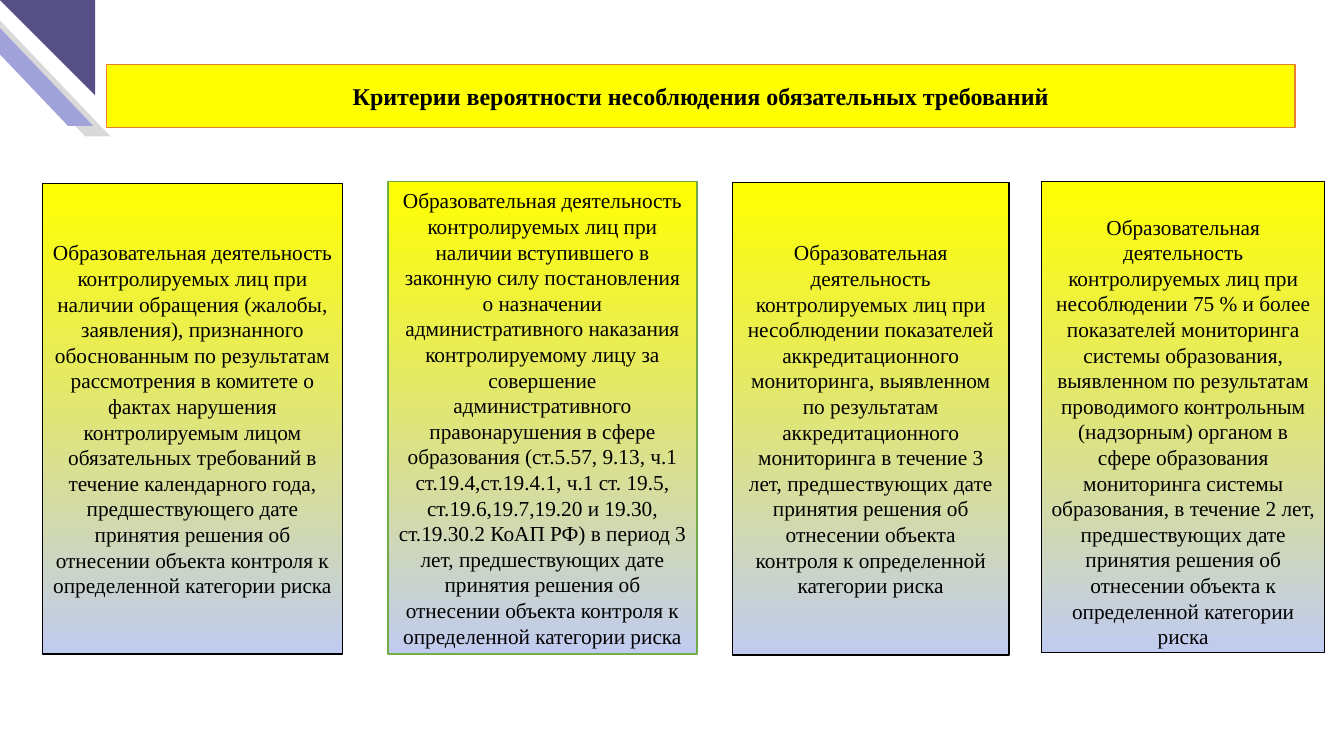
from dataclasses import dataclass

from pptx import Presentation
from pptx.dml.color import RGBColor
from pptx.enum import shapes, text
from pptx.util import Inches, Pt

FONT = "Times New Roman"
BLACK = RGBColor(0x00, 0x00, 0x00)
YELLOW = RGBColor(0xFF, 0xFF, 0x00)
PALE_BLUE = RGBColor(0xC0, 0xCB, 0xF0)
GREEN = RGBColor(0x70, 0xAD, 0x47)
ORANGE = RGBColor(0xED, 0x7D, 0x31)
GREY = RGBColor(0xD9, 0xD9, 0xD9)
LILAC = RGBColor(0xA2, 0xA2, 0xDA)
VIOLET = RGBColor(0x56, 0x50, 0x87)


@dataclass
class Box:
    left: float
    top: float
    width: float
    height: float


@dataclass
class Criterion:
    box: Box
    wording: str
    line: RGBColor = BLACK
    top_inset: float = 0.05


START = "Образовательная деятельность контролируемых лиц при "
END = " к определенной категории риска"
DECISION = "предшествующих дате принятия решения об отнесении объекта"

CRITERIA = [
    Criterion(
        Box(0.44, 1.91, 3.13, 4.9),
        "наличии обращения (жалобы, заявления), признанного обоснованным "
        "по результатам рассмотрения в комитете о фактах нарушения "
        "контролируемым лицом обязательных требований в течение календарного "
        "года, предшествующего дате принятия решения об отнесении объекта контроля",
    ),
    Criterion(
        Box(4.04, 1.89, 3.22, 4.92),
        "наличии вступившего в законную силу постановления о назначении "
        "административного наказания контролируемому лицу за совершение "
        "административного правонарушения в сфере образования (ст.5.57, 9.13, "
        "ч.1 ст.19.4,ст.19.4.1, ч.1 ст. 19.5, ст.19.6,19.7,19.20 и 19.30, "
        f"ст.19.30.2 КоАП РФ) в период 3 лет, {DECISION} контроля",
        line=GREEN,
    ),
    Criterion(
        Box(7.63, 1.9, 2.88, 4.92),
        "несоблюдении показателей аккредитационного мониторинга, выявленном "
        "по результатам аккредитационного мониторинга в течение 3 лет, "
        f"{DECISION} контроля",
    ),
    Criterion(
        Box(10.85, 1.89, 2.95, 4.9),
        "несоблюдении 75 % и более показателей мониторинга системы образования, "
        "выявленном по результатам проводимого контрольным (надзорным) органом "
        "в сфере образования мониторинга системы образования, в течение 2 лет, "
        f"{DECISION}",
        top_inset=0.35,
    ),
]


def add_shape(s, kind, box: Box, fill: RGBColor, line: RGBColor | None = None):
    sp = s.shapes.add_shape(kind, Inches(box.left), Inches(box.top),
                            Inches(box.width), Inches(box.height))
    sp.shadow.inherit = False
    sp.fill.solid()
    sp.fill.fore_color.rgb = fill
    if line is None:
        sp.line.fill.background()
    else:
        sp.line.color.rgb = line
        sp.line.width = Pt(1)
    return sp


def write(sp, wording: str, *, size: float, bold: bool = False,
          top_inset: float = 0.05) -> None:
    tf = sp.text_frame
    tf.word_wrap = True
    tf.vertical_anchor = text.MSO_ANCHOR.MIDDLE
    tf.margin_top = Inches(top_inset)
    p = tf.paragraphs[0]
    p.alignment = text.PP_ALIGN.CENTER
    r = p.add_run()
    r.text = wording
    r.font.name = FONT
    r.font.size = Pt(size)
    r.font.bold = bold
    r.font.color.rgb = BLACK


def add_corner(s) -> None:
    """Draw the two slanted bands and the triangle in the top left corner."""
    for left, top, color in ((-0.36, 0.11, GREY), (-0.54, 0, LILAC)):
        band = add_shape(s, shapes.MSO_SHAPE.PARALLELOGRAM,
                         Box(left, top, 1.51, 1.31), color)
        band.adjustments[0] = 0.953
        band._element.spPr.xfrm.set("flipH", "1")
    triangle = add_shape(s, shapes.MSO_SHAPE.RIGHT_TRIANGLE,
                         Box(0, 0, 0.99, 0.99), VIOLET)
    triangle.rotation = 180


def add_criterion(s, criterion: Criterion) -> None:
    sp = add_shape(s, shapes.MSO_SHAPE.RECTANGLE, criterion.box, YELLOW,
                   criterion.line)
    sp.fill.gradient()
    sp.fill.gradient_angle = 270
    for stop, color in zip(sp.fill.gradient_stops, (YELLOW, PALE_BLUE)):
        stop.color.rgb = color
    write(sp, START + criterion.wording + END, size=16,
          top_inset=criterion.top_inset)


def main() -> None:
    prs = Presentation()
    prs.slide_width, prs.slide_height = Inches(14), Inches(7.87)
    s = prs.slides.add_slide(prs.slide_layouts[6])
    add_corner(s)
    title = add_shape(s, shapes.MSO_SHAPE.RECTANGLE,
                      Box(1.11, 0.67, 12.38, 0.66), YELLOW, ORANGE)
    write(title, "Критерии вероятности несоблюдения обязательных требований",
          size=18, bold=True)
    for criterion in CRITERIA:
        add_criterion(s, criterion)
    prs.save("out.pptx")


if __name__ == "__main__":
    main()
